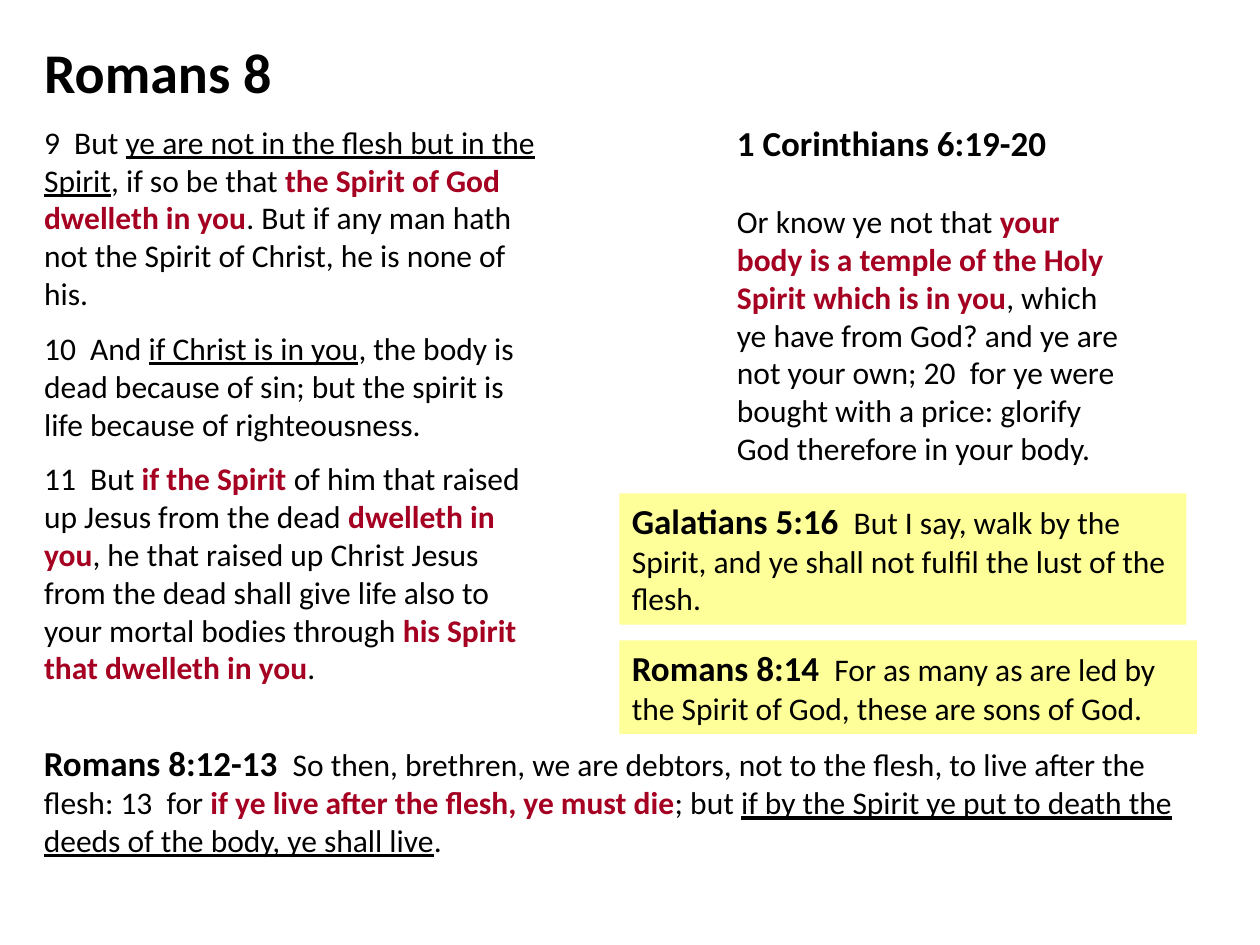
from dataclasses import dataclass
from lxml.etree import SubElement
from pptx import Presentation
from pptx.dml.color import RGBColor as Color
from pptx.enum.shapes import MSO_SHAPE as Shape
from pptx.enum.text import MSO_ANCHOR as Anchor, MSO_AUTO_SIZE as Fit, PP_ALIGN as Align
from pptx.oxml.ns import qn
from pptx.util import Inches, Pt


@dataclass(frozen=True)
class Theme:
    font: str = "Calibri"
    ink: Color = Color.from_string("000000")
    accent: Color = Color.from_string("A50021")
    panel: Color = Color.from_string("FFFF00")
    panel_opacity: int = 40
    title: int = 32
    heading: int = 20
    body: int = 18


theme = Theme()
deck = Presentation()
deck.slide_width, deck.slide_height = Inches(10), Inches(7.5)
columns, rows = 120, 90
column, row = deck.slide_width / columns, deck.slide_height / rows
page = deck.slides.add_slide(deck.slide_layouts[1])


def write(box, paragraphs, at, gap=0, fit=Fit.SHAPE_TO_FIT_TEXT):
    left, top, width, height = at
    box.left, box.top = round(left * column), round(top * row)
    box.width, box.height = round(width * column), round(height * row)
    frame = box.text_frame
    frame.word_wrap, frame.auto_size = True, fit
    frame.vertical_anchor = Anchor.TOP
    for index, spans in enumerate(paragraphs):
        para = frame.add_paragraph() if index else frame.paragraphs[0]
        para.alignment = Align.LEFT
        para.space_before = Pt(gap if index else 0)
        properties = para._p.get_or_add_pPr()
        properties.set("marL", "0")
        properties.set("indent", "0")
        SubElement(properties, qn("a:buNone"))
        for text, style in spans:
            span = para.add_run()
            span.text = text
            font = span.font
            font.name = theme.font
            font.size = Pt({"title": theme.title, "heading": theme.heading}.get(style, theme.body))
            font.bold = style in ("title", "heading", "key")
            font.underline = style == "underline"
            font.color.rgb = theme.accent if style == "key" else theme.ink


write(page.shapes.title, [[("Romans 8", "title")]], (3, 3, 50, 8), fit=Fit.NONE)

verses = [
    [
        ("9  But ", "plain"),
        ("ye are not in the flesh but in the Spirit", "underline"),
        (", if so be that ", "plain"),
        ("the Spirit of God dwelleth in you", "key"),
        (". But if any man hath not the Spirit of Christ, he is none of his.", "plain"),
    ],
    [
        ("10  And ", "plain"),
        ("if Christ is in you", "underline"),
        (", the body is dead because of sin; but the spirit is life because of righteousness.", "plain"),
    ],
    [
        ("11  But ", "plain"),
        ("if the Spirit ", "key"),
        ("of him that raised up Jesus from the dead ", "plain"),
        ("dwelleth in you", "key"),
        (", he that raised up Christ Jesus from the dead shall give life also to "
         "your mortal bodies through ", "plain"),
        ("his Spirit that dwelleth in you", "key"),
        (".", "plain"),
    ],
]
write(page.placeholders[1], verses, (3, 11.1, 50, 55.9), gap=9.75, fit=Fit.NONE)

debtors = [[
    ("Romans 8:12-13 ", "heading"),
    (" So then, brethren, we are debtors, not to the flesh, to live after the flesh: 13  for ", "plain"),
    ("if ye live after the flesh, ye must die", "key"),
    ("; but ", "plain"),
    ("if by the Spirit ye put to death the deeds of the body, ye shall live", "underline"),
    (".", "plain"),
]]
temple = [
    [("1 Corinthians 6:19-20 ", "heading"), (" ", "plain")],
    [
        ("Or know ye not that ", "plain"),
        ("your body is a temple of the Holy Spirit which is in you", "key"),
        (", which ye have from God? and ye are not your own; 20  for ye were bought "
         "with a price: glorify God therefore in your body.", "plain"),
    ],
]
for passage, at, gap in [(debtors, (3, 70, 113, 12.5), 0), (temple, (69, 11, 39, 34.3), 22)]:
    write(page.shapes.add_textbox(0, 0, 0, 0), passage, at, gap)

panels = [
    ("Romans 8:14 ", " For as many as are led by the Spirit of God, these are sons of God.",
     (59, 61, 55, 8.9)),
    ("Galatians 5:16 ", " But I say, walk by the Spirit, and ye shall not fulfil the lust of the flesh.",
     (59, 47, 54, 12.5)),
]
for reference, verse, at in panels:
    panel = page.shapes.add_shape(Shape.RECTANGLE, 0, 0, 0, 0)
    panel.shadow.inherit = False
    panel.line.fill.background()
    panel.fill.solid()
    panel.fill.fore_color.rgb = theme.panel
    tint = panel.fill._xPr.find(qn("a:solidFill"))[0]
    SubElement(tint, qn("a:alpha"), val=str(theme.panel_opacity * 1000))
    write(panel, [[(reference, "heading"), (verse, "plain")]], at)

deck.save("out.pptx")
